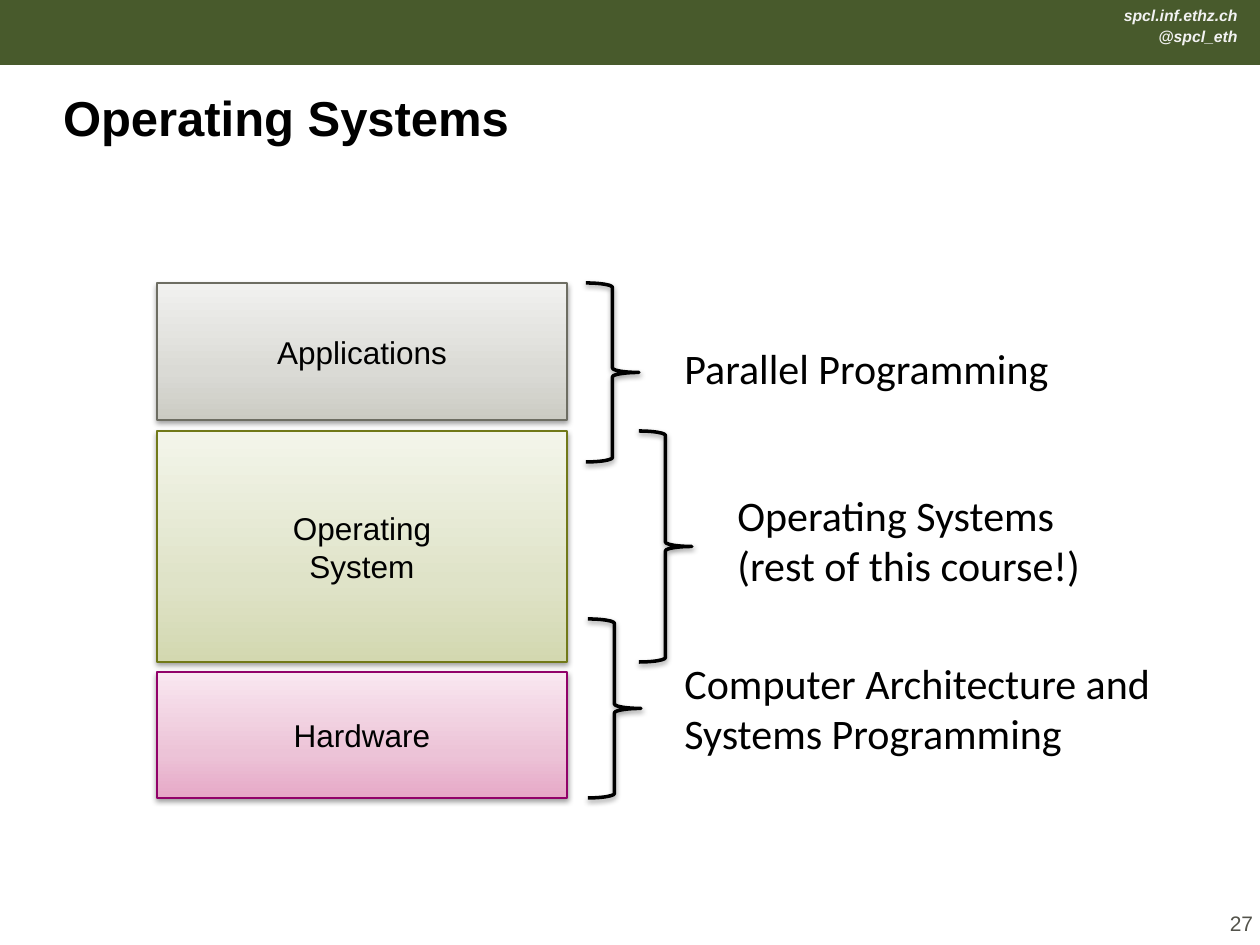
from copy import deepcopy
from lxml import etree
from pptx import Presentation
from pptx.dml.color import RGBColor
from pptx.enum.shapes import MSO_SHAPE
from pptx.enum.text import MSO_ANCHOR, MSO_AUTO_SIZE, PP_ALIGN
from pptx.oxml import parse_xml
from pptx.oxml.ns import nsdecls, qn
from pptx.util import Pt

RECT, BRACE = MSO_SHAPE.RECTANGLE, MSO_SHAPE.RIGHT_BRACE
LEFT, CENTER, RIGHT = PP_ALIGN.LEFT, PP_ALIGN.CENTER, PP_ALIGN.RIGHT
TOP, MIDDLE, BOTTOM = MSO_ANCHOR.TOP, MSO_ANCHOR.MIDDLE, MSO_ANCHOR.BOTTOM
PX = 914400 / 126  # EMU per px
rgb = RGBColor.from_string

SHADOW = (f'<a:outerShdw {nsdecls("a")} blurRad="40000" dist="20000" dir="5400000" '
          'rotWithShape="0"><a:srgbClr val="000000"><a:alpha val="38000"/>'
          '</a:srgbClr></a:outerShdw>')


def put_text(shape, text, size, font="Arial", color="000000", align=LEFT,
             anchor=TOP, wrap=False, insets=None, **fmt):
    tf = shape.text_frame
    tf.word_wrap, tf.vertical_anchor = wrap, anchor
    tf.auto_size = MSO_AUTO_SIZE.NONE
    if insets:
        tf.margin_left, tf.margin_top, tf.margin_right, tf.margin_bottom = [
            round(v * PX) for v in insets]
    p = tf.paragraphs[0]
    p.text, p.alignment = text, align
    for r in p.runs:
        r.font.color.rgb = rgb(color)
        for name, value in {"name": font, "size": Pt(size), **fmt}.items():
            setattr(r.font, name, value)


def style_line(shape, color, width):
    shape.line.color.rgb = rgb(color)
    shape.line.width = Pt(width)
    shape.shadow.inherit = False
    shape._element.spPr.find(qn("a:effectLst")).append(parse_xml(SHADOW))


prs = Presentation()
prs.slide_width, prs.slide_height = round(1260 * PX), round(945 * PX)
s = prs.slides.add_slide(prs.slide_layouts[5])

# Header band
band = s.shapes.add_shape(RECT, 0, 0, prs.slide_width, round(65 * PX))
band.fill.solid()
band.fill.fore_color.rgb = rgb("485A2C")
band.line.fill.background()
band.shadow.inherit = False
for text, x, y, w in [("spcl.inf.ethz.ch", 1110, 0, 140), ("@spcl_eth", 1145, 21, 105)]:
    tb = s.shapes.add_textbox(*[round(v * PX) for v in (x, y, w, 32)])
    put_text(tb, text, 9, color="F2F2F2", align=RIGHT, bold=True, italic=True)

# Title
title = s.shapes.title
title.left, title.top, title.width, title.height = [
    round(v * PX) for v in (44, 73, 1171, 73)]
title.fill.solid()
title.fill.fore_color.rgb = rgb("FFFFFF")
put_text(title, "Operating Systems", 28, anchor=BOTTOM, wrap=True,
         insets=(19, 0, 20, 0), bold=True)

# System layers: text, top, height, gradient from bottom to top, outline
layers = [
    ("Operating\nSystem", 431, 231, ("D3D8B0", "DFE3C8", "F3F5EA"), "717919"),
    ("Applications", 283, 137, ("CBCBC3", "DADAD5", "F1F1EF"), "6D6D62"),
    ("Hardware", 672, 126, ("E6A8C7", "ECC3D7", "F9E7F0"), "910169"),
]
for text, y, h, colors, outline in layers:
    sp = s.shapes.add_shape(RECT, *[round(v * PX) for v in (157, y, 410, h)])
    sp.fill.gradient()
    sp.fill.gradient_angle = 90
    stop_list = sp._element.spPr.find(qn("a:gradFill")).find(qn("a:gsLst"))
    stop_list.insert(1, deepcopy(stop_list[0]))
    for stop, color, position in zip(sp.fill.gradient_stops, colors, (0, 0.35, 1)):
        stop.color.rgb = rgb(color)
        stop.position = position
    style_line(sp, outline, 0.75)
    put_text(sp, text, 18, align=CENTER, anchor=MIDDLE, wrap=True)

# Braces with the course each one covers: brace x, y, h, then label x, y, w, h
courses = [
    ("Computer Architecture and\nSystems Programming",
     (588, 619, 179), (672, 651, 495, 115)),
    ("Parallel Programming", (586, 283, 179), (672, 336, 393, 64)),
    ("Operating Systems\n(rest of this course!)",
     (639, 431, 231), (725, 483, 370, 114)),
]
for text, (x, y, h), label in courses:
    brace = s.shapes.add_shape(BRACE, *[round(v * PX) for v in (x, y, 53, h)])
    brace.fill.background()
    style_line(brace, "000000", 2)
    tb = s.shapes.add_textbox(*[round(v * PX) for v in label])
    put_text(tb, text, 24, font="Calibri")

# Slide number
tb = s.shapes.add_textbox(*[round(v * PX) for v in (1223, 891, 37, 64)])
put_text(tb, "27", 12, color="53534B", align=CENTER, anchor=MIDDLE, insets=(0, 0, 0, 0))

prs.save("out.pptx")
